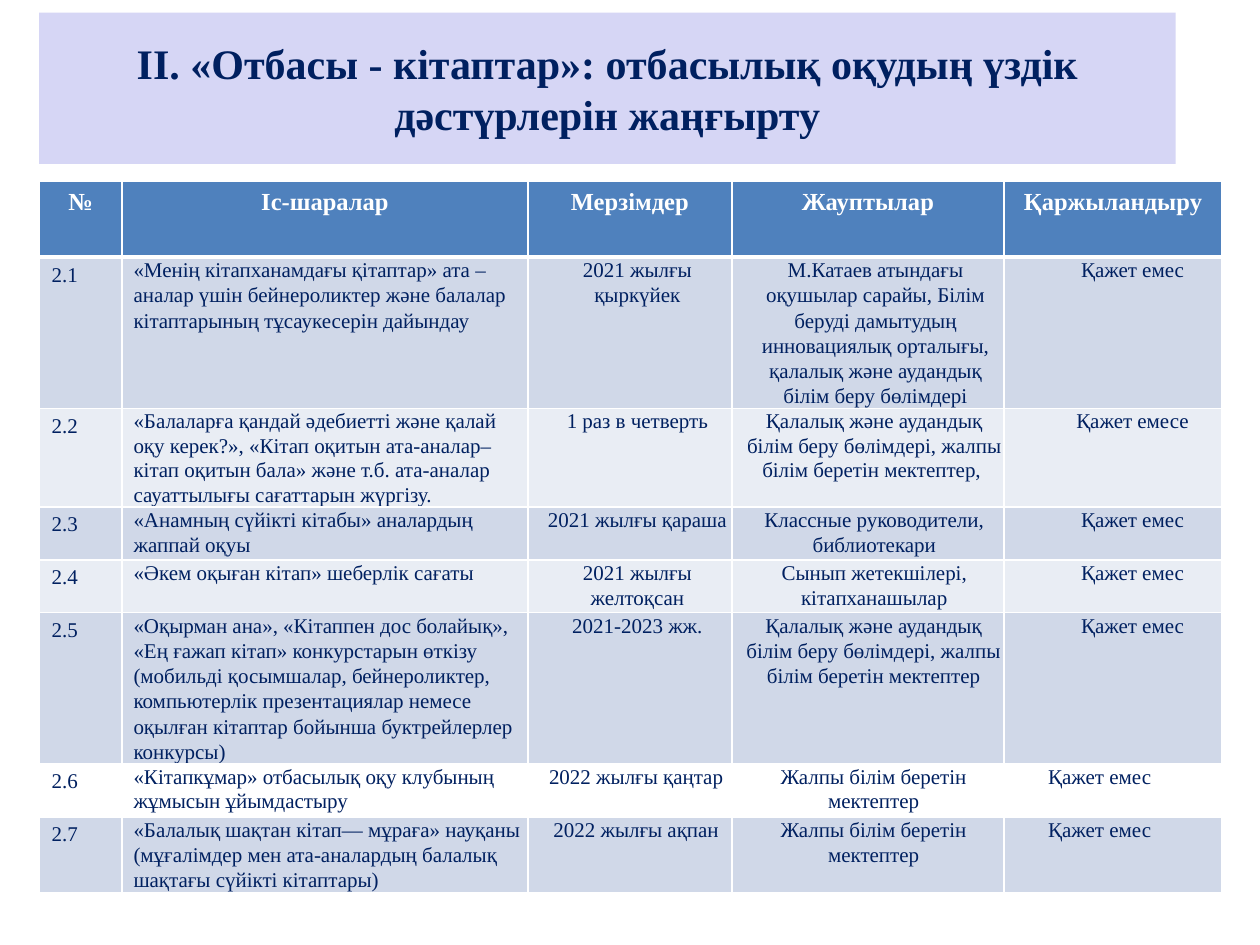
from pptx import Presentation
from pptx.dml.color import RGBColor
from pptx.enum.text import MSO_ANCHOR, MSO_AUTO_SIZE, PP_ALIGN
from pptx.oxml import parse_xml
from pptx.oxml.ns import nsdecls
from pptx.util import Inches, Pt

COLORS = {
    "navy": "002060",
    "white": "FFFFFF",
    "lavender": "D6D6F5",
    "header": "4F81BD",
    "dark_band": "D0D8E8",
    "light_band": "E9EDF4",
}
TITLE = "ІІ. «Отбасы - кітаптар»: отбасылық оқудың үздік дәстүрлерін жаңғырту"
HEADERS = ["№", "Іс-шаралар", "Мерзімдер", "Жауптылар", "Қаржыландыру"]
COLUMN_WIDTHS = [0.66, 3.22, 1.62, 2.16, 1.73]
ROW_HEIGHTS = [0.6, 1.15] + [0.42] * 6
EVENTS = [
    {
        "texts": [
            "«Менің кітапханамдағы қітаптар» ата –аналар үшін бейнероликтер және балалар кітаптарының тұсаукесерін дайындау",
            "2021 жылғы қыркүйек",
            "М.Катаев атындағы оқушылар сарайы, Білім беруді дамытудың инновациялық орталығы, қалалық және аудандық білім беру бөлімдері",
            "Қажет емес",
        ],
        "fill": "dark_band", "spacing": 14.4, "indents": [0.09, 0.12, 0.12, 0.31],
    },
    {
        "texts": [
            "«Балаларға қандай әдебиетті және қалай оқу керек?», «Кітап оқитын ата-аналар– кітап оқитын бала» және т.б. ата-аналар сауаттылығы сағаттарын жүргізу.",
            "1 раз в четверть",
            "Қалалық және аудандық білім беру бөлімдері, жалпы білім беретін мектептер, ",
            "Қажет емесе",
        ],
        "fill": "light_band", "spacing": 14.1, "indents": [0.09, 0.12, 0.1, 0.31],
    },
    {
        "texts": [
            "«Анамның сүйікті кітабы» аналардың жаппай оқуы",
            "2021 жылғы қараша",
            "Классные руководители, библиотекари",
            "Қажет емес",
        ],
        "fill": "dark_band", "spacing": 14.4, "indents": [0.09, 0.12, 0.1, 0.31],
    },
    {
        "texts": [
            "«Әкем оқыған кітап» шеберлік сағаты",
            "2021 жылғы желтоқсан",
            "Сынып жетекшілері, кітапханашылар",
            "Қажет емес",
        ],
        "fill": "light_band", "spacing": 14.4, "indents": [0.09, 0.12, 0.1, 0.31],
    },
    {
        "texts": [
            "«Оқырман ана», «Кітаппен дос болайық», «Ең ғажап кітап» конкурстарын өткізу (мобильді қосымшалар, бейнероликтер, компьютерлік презентациялар немесе оқылған кітаптар бойынша буктрейлерлер конкурсы)",
            "2021-2023 жж.",
            "Қалалық және аудандық білім беру бөлімдері, жалпы білім беретін мектептер",
            "Қажет емес",
        ],
        "fill": "dark_band", "spacing": 14.4, "indents": [0.09, 0.12, 0.09, 0.31],
    },
    {
        "texts": [
            "«Кітапкұмар» отбасылық оқу клубының жұмысын ұйымдастыру",
            "2022 жылғы қаңтар",
            "Жалпы білім беретін мектептер",
            "Қажет емес",
        ],
        "fill": None, "spacing": 14.1, "indents": [0.09, 0.1, 0.09, 0.35],
    },
    {
        "texts": [
            "«Балалық шақтан кітап— мұраға» науқаны (мұғалімдер мен ата-аналардың балалық шақтағы сүйікті кітаптары)",
            "2022 жылғы ақпан",
            "Жалпы білім беретін мектептер",
            "Қажет емес",
        ],
        "fill": "dark_band", "spacing": 14.4, "indents": [0.09, 0.1, 0.09, 0.35],
    },
]


def set_values(target, values):
    for name, value in values.items():
        setattr(target, name, value)


def write_text(frame, text, size, color, bold, alignment, spacing=None, indent=0):
    para = frame.paragraphs[0]
    set_values(para, {"alignment": alignment, "line_spacing": spacing})
    if indent:
        properties = para._p.get_or_add_pPr()
        properties.set("marL", str(Inches(indent)))
        properties.set("indent", "0")
    span = para.add_run()
    span.text = text
    set_values(span.font, {"name": "Times New Roman", "size": Pt(size), "bold": bold})
    span.font.color.rgb = RGBColor.from_string(COLORS[color])


def paint(fill, color):
    if color is None:
        fill.background()
    else:
        fill.solid()
        fill.fore_color.rgb = RGBColor.from_string(COLORS[color])


def add_borders(cell, top=1, bottom=1):
    properties = cell._tc.get_or_add_tcPr()
    for side, width in {"L": 1, "R": 1, "T": top, "B": bottom}.items():
        properties.append(parse_xml(
            f'<a:ln{side} {nsdecls("a")} w="{Pt(width)}"><a:solidFill>'
            f'<a:srgbClr val="{COLORS["white"]}"/></a:solidFill></a:ln{side}>'))


def set_margins(cell, horizontal, vertical):
    set_values(cell, {
        "margin_left": Inches(horizontal), "margin_right": Inches(horizontal),
        "margin_top": Inches(vertical), "margin_bottom": Inches(vertical)})


def add_title(page):
    box = page.shapes.title
    set_values(box, {"left": Inches(0.31), "top": Inches(0.1),
                     "width": Inches(9.02), "height": Inches(1.2)})
    paint(box.fill, "lavender")
    set_values(box.text_frame, {"word_wrap": True, "auto_size": MSO_AUTO_SIZE.NONE,
                                "vertical_anchor": MSO_ANCHOR.MIDDLE})
    write_text(box.text_frame, TITLE, 24, "navy", True, PP_ALIGN.CENTER)


def fill_header(table):
    for cell, text in zip(table.rows[0].cells, HEADERS):
        set_margins(cell, 0.1, 0.05)
        add_borders(cell, bottom=3)
        paint(cell.fill, "header")
        write_text(cell.text_frame, text, 14, "white", True, PP_ALIGN.CENTER, 1.02)


def fill_event(table, number, event):
    texts = [f"2.{number}"] + event["texts"]
    indents = [0] + event["indents"]
    for column, (text, indent) in enumerate(zip(texts, indents)):
        cell = table.cell(number, column)
        is_number = column == 0
        is_left = column < 2 or indent == 0.35
        set_margins(cell, *((0.1, 0.05) if is_number else (0, 0)))
        add_borders(cell, top=3 if number == 1 else 1)
        paint(cell.fill, event["fill"])
        write_text(cell.text_frame, text, 12, "navy", False,
                   PP_ALIGN.LEFT if is_left else PP_ALIGN.CENTER,
                   None if is_number else Pt(event["spacing"]), indent)


def add_plan(page):
    table = page.shapes.add_table(
        len(ROW_HEIGHTS), len(COLUMN_WIDTHS), Inches(0.31), Inches(1.44),
        Inches(sum(COLUMN_WIDTHS)), Inches(sum(ROW_HEIGHTS))).table
    for column, width in zip(table.columns, COLUMN_WIDTHS):
        column.width = Inches(width)
    for row, height in zip(table.rows, ROW_HEIGHTS):
        row.height = Inches(height)
    fill_header(table)
    for number, event in enumerate(EVENTS, 1):
        fill_event(table, number, event)


def main():
    deck = Presentation()
    set_values(deck, {"slide_width": Inches(10), "slide_height": Inches(7.5)})
    page = deck.slides.add_slide(deck.slide_layouts[5])
    add_title(page)
    add_plan(page)
    deck.save("out.pptx")


if __name__ == "__main__":
    main()
